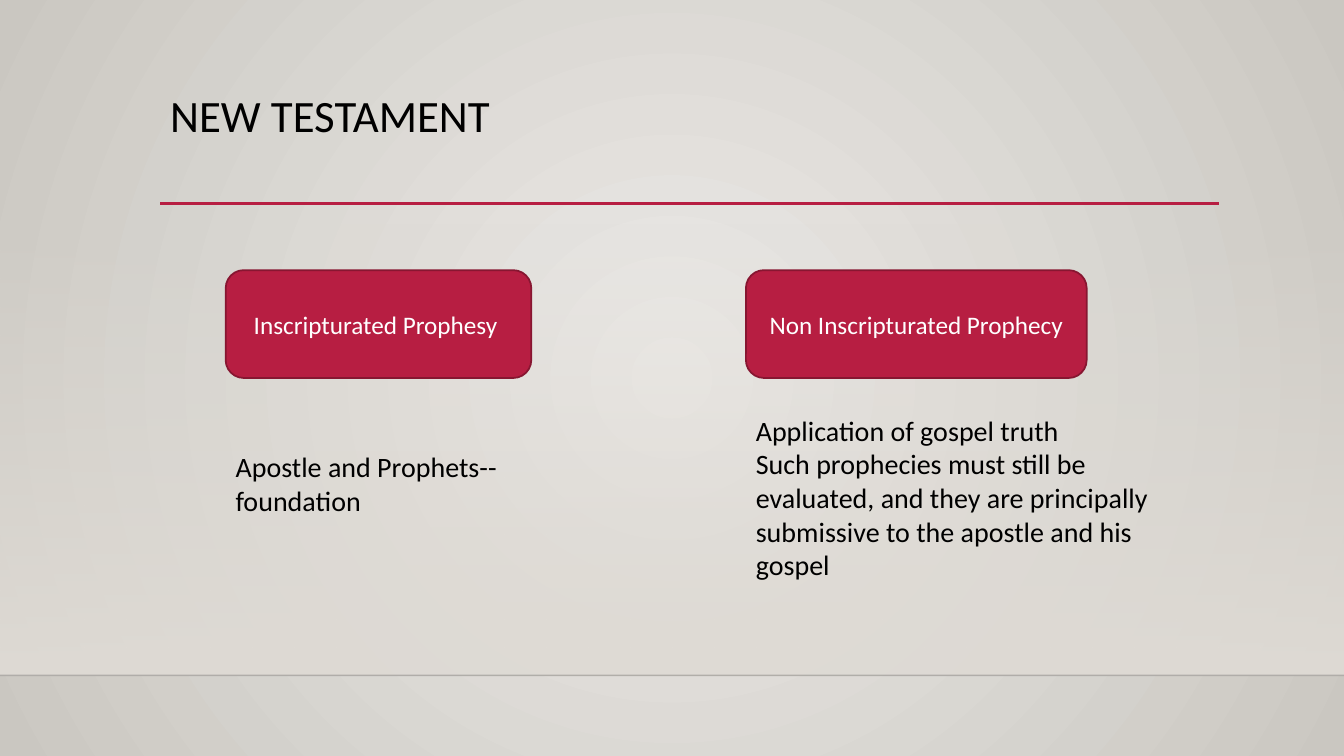
from lxml.etree import SubElement
from pptx import Presentation
from pptx.dml.color import RGBColor
from pptx.enum.shapes import MSO_CONNECTOR, MSO_SHAPE
from pptx.enum.text import MSO_ANCHOR, PP_ALIGN
from pptx.oxml.ns import qn
from pptx.util import Pt

WIDE, HIGH = 960, 540
FLOOR = 482.4
RED, EDGE, BLACK, WHITE, SAND = "B71E42", "871631", "000000", "FFFFFF", "DFDBD5"

TITLE = "NEW TESTAMENT"
# left, label, label width, body lines, body top, body width, body height
COLUMNS = [
    (161.2, "Inscripturated Prophesy ", 218.3,
     ["Apostle and Prophets--foundation"], 317.5, 283, 55.4),
    (532.8, "Non Inscripturated Prophecy", 243.4,
     ["Application of gospel truth",
      "Such prophecies must still be evaluated, and they are principally "
      "submissive to the apostle and his gospel"], 291.6, 295.2, 128),
]
LABEL_TOP, LABEL_HIGH = 193, 77


def color(code):
    return RGBColor.from_string(code)


def fade(fill, root, stops):
    """Set a gradient from (place, colour, opacity) stops; return its element."""
    fill.gradient()
    grad = root.find(".//" + qn("a:gradFill"))
    for child in list(grad):
        grad.remove(child)
    row = SubElement(grad, qn("a:gsLst"))
    for place, code, alpha in stops:
        stop = SubElement(row, qn("a:gs"), pos=str(place * 1000))
        tint = SubElement(stop, qn("a:srgbClr"), val=code)
        if alpha < 100:
            SubElement(tint, qn("a:alpha"), val=str(alpha * 1000))
    return grad


def write(shape, lines, size=20, ink=BLACK, align=PP_ALIGN.LEFT,
          anchor=MSO_ANCHOR.TOP, space=None):
    frame = shape.text_frame
    frame.word_wrap = True
    frame.vertical_anchor = anchor
    frame.text = "\n".join(lines)
    for para in frame.paragraphs:
        para.alignment = align
        para.line_spacing = space
        for run in para.runs:
            run.font.name = "Calibri"
            run.font.size = Pt(size)
            run.font.color.rgb = color(ink)


def rule(left, right, top, code, width, alpha=100):
    line = page.shapes.add_connector(
        MSO_CONNECTOR.STRAIGHT, Pt(left), Pt(top), Pt(right), Pt(top))
    line.line.color.rgb = color(code)
    line.line.width = Pt(width)
    if alpha < 100:
        tint = line._element.find(".//" + qn("a:srgbClr"))
        SubElement(tint, qn("a:alpha"), val=str(alpha * 1000))
    SubElement(line._element.spPr, qn("a:effectLst"))


def block(kind, *box):
    shape = page.shapes.add_shape(kind, *map(Pt, box))
    shape.shadow.inherit = False
    return shape


def text(box, lines, **style):
    write(page.shapes.add_textbox(*map(Pt, box)), lines, **style)


deck = Presentation()
deck.slide_width, deck.slide_height = Pt(WIDE), Pt(HIGH)
page = deck.slides.add_slide(deck.slide_layouts[6])

glow = fade(page.background.fill, page._element,
            [(0, "ECEAE7", 100), (100, "CAC7C1", 100)])
path = SubElement(glow, qn("a:path"), path="circle")
SubElement(path, qn("a:fillToRect"), l="50000", t="50000", r="50000", b="50000")

wall = block(MSO_SHAPE.RECTANGLE, 0, 159, WIDE, FLOOR - 159)
wall.line.fill.background()
haze = fade(wall.fill, wall._element, [(0, SAND, 0), (100, SAND, 100)])
SubElement(haze, qn("a:lin"), ang="5400000", scaled="0")

rule(0, WIDE, FLOOR, "000001", 1, alpha=20)
rule(114.5, 871, 145.4, RED, 2.5)
text((114.5, 63.4, 756, 82.6), [TITLE], size=32, space=0.9)

for left, label, width, lines, top, wide, high in COLUMNS:
    card = block(MSO_SHAPE.ROUNDED_RECTANGLE, left, LABEL_TOP, width, LABEL_HIGH)
    card.fill.solid()
    card.fill.fore_color.rgb = color(RED)
    card.line.color.rgb = color(EDGE)
    card.line.width = Pt(1.25)
    write(card, [label], size=18, ink=WHITE, align=PP_ALIGN.CENTER,
          anchor=MSO_ANCHOR.MIDDLE)
    text((left, top, wide, high), lines)

deck.save("out.pptx")
